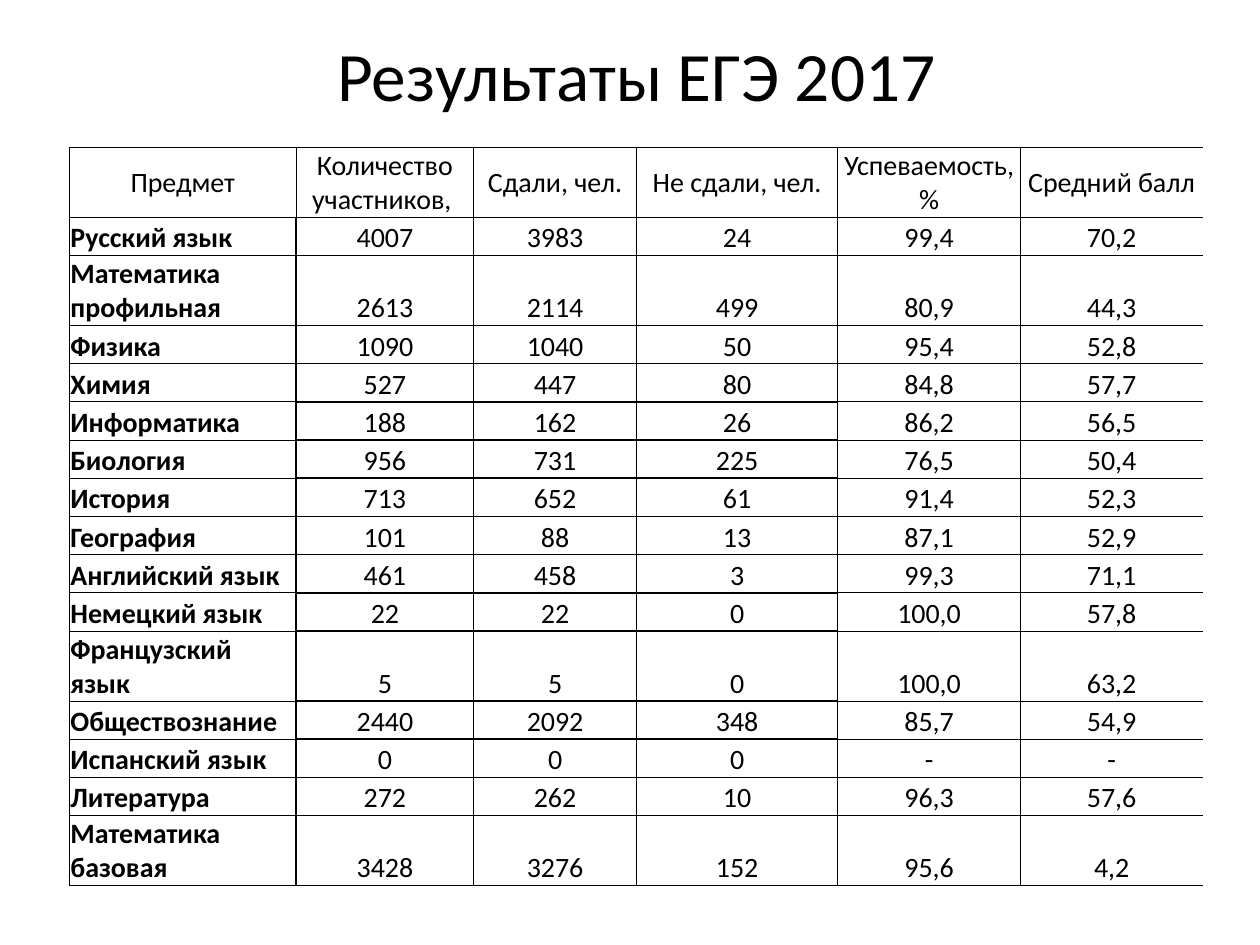
from lxml import etree
from pptx import Presentation
from pptx.dml.color import RGBColor
from pptx.enum.text import MSO_ANCHOR, PP_ALIGN
from pptx.oxml.ns import qn
from pptx.util import Cm, Pt

LEFT, CENTER = PP_ALIGN.LEFT, PP_ALIGN.CENTER
MIDDLE, BOTTOM = MSO_ANCHOR.MIDDLE, MSO_ANCHOR.BOTTOM

THIN, THICK = 0.5, 1
COLUMN_WIDTHS = [4.57, 3.58, 3.28, 4.06, 3.68, 3.68]
LINE_HEIGHT, DOUBLE_HEIGHT = 0.77, 1.41
COUNT_COLUMNS = (1, 2, 3)

HEADER = ["Предмет", "Количество участников, ", "Сдали, чел.", "Не сдали, чел.",
          "Успеваемость, %", "Средний балл"]
RESULTS = [
    ["Русский язык", "4007", "3983", "24", "99,4", "70,2"],
    ["Математика профильная", "2613", "2114", "499", "80,9", "44,3"],
    ["Физика", "1090", "1040", "50", "95,4", "52,8"],
    ["Химия", "527", "447", "80", "84,8", "57,7"],
    ["Информатика", "188", "162", "26", "86,2", "56,5"],
    ["Биология", "956", "731", "225", "76,5", "50,4"],
    ["История", "713", "652", "61", "91,4", "52,3"],
    ["География", "101", "88", "13", "87,1", "52,9"],
    ["Английский язык", "461", "458", "3", "99,3", "71,1"],
    ["Немецкий язык", "22", "22", "0", "100,0", "57,8"],
    ["Французский язык", "5", "5", "0", "100,0", "63,2"],
    ["Обществознание", "2440", "2092", "348", "85,7", "54,9"],
    ["Испанский язык", "0", "0", "0", "-", "-"],
    ["Литература", "272", "262", "10", "96,3", "57,6"],
    ["Математика базовая", "3428", "3276", "152", "95,6", "4,2"],
]
DOUBLE_ROWS = {"Предмет", "Математика профильная", "Французский язык", "Математика базовая"}


def color(value):
    return RGBColor.from_string(value)


def border_widths(row, column, last_row, last_column):
    header, last = row == 0, row == last_row
    counts = column in COUNT_COLUMNS
    return {
        "a:lnL": THICK if column == 1 and not header else THIN,
        "a:lnR": None if column == last_column else THICK if column == 0 and not header else THIN,
        "a:lnT": THICK if counts or row < 2 else THIN,
        "a:lnB": THICK if header or counts != last else THIN,
    }


class SlideBuilder:
    """Holds the text style and the current slide."""

    font, ink, paper = "Calibri", "000000", "FFFFFF"

    def __init__(self, slide):
        self.slide = slide

    def add_text(self, text_frame, text, size, alignment, bold=False):
        paragraph = text_frame.paragraphs[0]
        paragraph.alignment = alignment
        run = paragraph.add_run()
        run.text = text
        run.font.name, run.font.size, run.font.bold = self.font, Pt(size), bold
        run.font.color.rgb = color(self.ink)

    def title(self, text, left, top, width, height):
        shape = self.slide.shapes.title
        shape.left, shape.top, shape.width, shape.height = map(Cm, (left, top, width, height))
        shape.text_frame.vertical_anchor = MIDDLE
        self.add_text(shape.text_frame, text, 39.6, CENTER)

    def borders(self, cell, widths):
        properties = cell._tc.get_or_add_tcPr()
        for side, width in widths.items():
            line = etree.SubElement(properties, qn(side))
            if width is None:
                etree.SubElement(line, qn("a:noFill"))
            else:
                line.set("w", str(Pt(width)))
                fill = etree.SubElement(line, qn("a:solidFill"))
                etree.SubElement(fill, qn("a:srgbClr"), val=self.ink)

    def cell(self, cell, text, header, subject):
        cell.margin_left = cell.margin_right = cell.margin_top = Cm(0.02)
        cell.margin_bottom = 0
        cell.vertical_anchor = MIDDLE if header else BOTTOM
        if subject:
            cell.fill.solid()
            cell.fill.fore_color.rgb = color(self.paper)
        else:
            cell.fill.background()
        self.add_text(cell.text_frame, text, 16, LEFT if subject else CENTER, subject)

    def table(self, rows, left, top):
        heights = [DOUBLE_HEIGHT if row[0] in DOUBLE_ROWS else LINE_HEIGHT for row in rows]
        table = self.slide.shapes.add_table(
            len(rows), len(COLUMN_WIDTHS), Cm(left), Cm(top),
            Cm(sum(COLUMN_WIDTHS)), Cm(sum(heights))).table
        table.first_row = table.horz_banding = False
        for column, width in zip(table.columns, COLUMN_WIDTHS):
            column.width = Cm(width)
        for row, height in zip(table.rows, heights):
            row.height = Cm(height)
        for row, values in enumerate(rows):
            for column, text in enumerate(values):
                cell = table.cell(row, column)
                self.borders(cell, border_widths(row, column, len(rows) - 1, len(values) - 1))
                self.cell(cell, text, row == 0, row > 0 and column == 0)


def main():
    presentation = Presentation()
    presentation.slide_width, presentation.slide_height = Cm(25.4), Cm(19.05)
    builder = SlideBuilder(presentation.slides.add_slide(presentation.slide_layouts[5]))
    builder.title("Результаты ЕГЭ 2017", 1.4, 0.58, 22.86, 1.83)
    builder.table([HEADER] + RESULTS, 1.4, 2.97)
    presentation.save("out.pptx")


if __name__ == "__main__":
    main()
